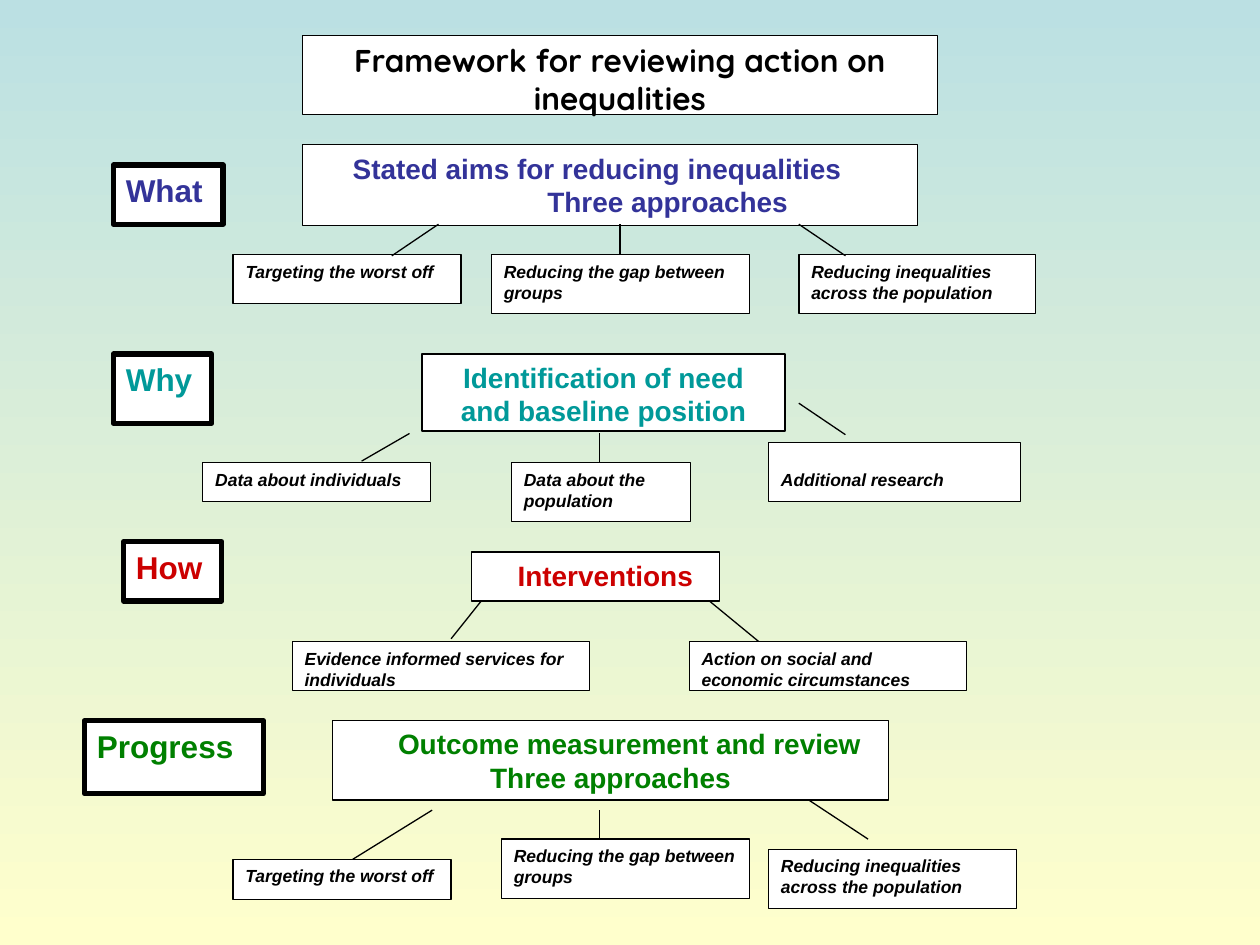
"""Build the slide showing a framework for reviewing action on inequalities."""
from dataclasses import dataclass

from lxml import etree
from pptx import Presentation
from pptx.dml.color import RGBColor
from pptx.enum import shapes, text
from pptx.oxml.ns import qn
from pptx.util import Inches, Pt

WIDTH, HEIGHT = Inches(10), Inches(7.5)
BLACK, WHITE = "000000", "FFFFFF"
BLUE, TEAL, RED, GREEN = "333399", "009999", "CC0000", "008000"


@dataclass(frozen=True)
class Style:
    """Look of one kind of box."""
    size: int
    font: str = "Arial"
    italic: bool = False
    centred: bool = False
    border: float = 0.75


TITLE = Style(18, font="Quicksand", centred=True)
LABEL = Style(18, border=3)
HEADING = Style(16, centred=True)
DETAIL = Style(10, italic=True)


@dataclass(frozen=True)
class Box:
    """Text box placed in percent of the slide; insets and indents in inches."""
    left: float
    top: float
    width: float
    height: float
    lines: tuple[str, ...]
    style: Style = DETAIL
    colour: str = BLACK
    indents: tuple[float, ...] = (0, 0)
    inset_top: float = 0.05
    inset_right: float = 0.1


@dataclass(frozen=True)
class Link:
    """Straight line between two points in percent of the slide."""
    x1: float
    y1: float
    x2: float
    y2: float


TARGETING = ("Targeting the worst off",)
GAP = ("Reducing the gap between groups",)
ACROSS = ("Reducing inequalities across the population",)

BOXES = (
    Box(24, 3.73, 50.4, 8.4, ("Framework for reviewing action on inequalities",), TITLE),

    Box(9, 17.47, 8.7, 6.27, ("What",), LABEL, BLUE),
    Box(24, 15.33, 48.8, 8.53, ("Stated aims for reducing inequalities", "Three approaches"),
        HEADING, BLUE, indents=(0, 1.12), inset_right=0.3),
    Box(18.5, 26.93, 18.1, 5.2, TARGETING),
    Box(39, 26.93, 20.5, 6.27, GAP),
    Box(63.4, 26.93, 18.8, 6.27, ACROSS),

    Box(9, 37.47, 7.8, 7.33, ("Why",), LABEL, TEAL),
    Box(33.5, 37.47, 28.8, 8.13, ("Identification of need and baseline position",),
        HEADING, TEAL),
    Box(16.1, 48.93, 18.1, 4.13, ("Data about individuals",)),
    Box(40.6, 48.93, 14.2, 6.27, ("Data about the population",)),
    Box(61, 46.8, 20, 6.27, ("Additional research",), inset_top=0.21),

    Box(9.8, 57.33, 7.8, 6.27, ("How",), LABEL, RED),
    Box(37.4, 58.4, 19.7, 5.2, ("Interventions",), Style(16), RED, indents=(0.27,)),
    Box(23.2, 67.87, 23.6, 5.2, ("Evidence informed services for individuals",)),
    Box(54.7, 67.87, 22, 5.2, ("Action on social and economic circumstances",)),

    Box(6.7, 76.27, 14.2, 7.73, ("Progress",), LABEL, GREEN),
    Box(26.4, 76.27, 44.1, 8.4, ("Outcome measurement and review", "Three approaches"),
        HEADING, GREEN, indents=(0.3, 0)),
    Box(18.5, 90.93, 17.3, 4.27, TARGETING),
    Box(39.8, 88.8, 19.7, 6.27, GAP),
    Box(61, 89.87, 19.7, 6.27, ACROSS),
)

LINKS = (
    Link(34.8, 23.73, 31.1, 27.07),
    Link(49.2, 23.73, 49.2, 26.93),
    Link(63.4, 23.73, 67.1, 27.07),
    Link(32.5, 45.87, 28.7, 48.8),
    Link(47.6, 45.87, 47.6, 48.93),
    Link(63.4, 42.67, 67.1, 46),
    Link(38.2, 63.6, 35.8, 67.6),
    Link(56.3, 63.6, 60.2, 67.87),
    Link(34.3, 85.73, 28, 90.93),
    Link(47.6, 85.73, 47.6, 88.8),
    Link(64.2, 84.67, 68.9, 88.8),
)


def across(share: float) -> int:
    """Turn a percentage of the slide width into a length."""
    return round(WIDTH * share / 100)


def down(share: float) -> int:
    """Turn a percentage of the slide height into a length."""
    return round(HEIGHT * share / 100)


def paint(colour_format, colour: str) -> None:
    """Set a colour from a hex string."""
    colour_format.rgb = RGBColor.from_string(colour)


def draw_line(line, width: float) -> None:
    """Give an outline or connector a solid black stroke."""
    line.fill.solid()
    paint(line.color, BLACK)
    line.width = Pt(width)


def add_box(slide, box: Box) -> None:
    """Add a white bordered box with its text."""
    shape = slide.shapes.add_shape(
        shapes.MSO_SHAPE.RECTANGLE, across(box.left), down(box.top),
        across(box.width), down(box.height))
    shape.shadow.inherit = False
    shape.fill.solid()
    paint(shape.fill.fore_color, WHITE)
    draw_line(shape.line, box.style.border)

    frame = shape.text_frame
    frame.word_wrap = True
    frame.vertical_anchor = text.MSO_ANCHOR.TOP
    frame.margin_top = Inches(box.inset_top)
    frame.margin_right = Inches(box.inset_right)
    frame.text = "\n".join(box.lines)
    for paragraph, indent in zip(frame.paragraphs, box.indents):
        centred = box.style.centred
        paragraph.alignment = text.PP_ALIGN.CENTER if centred else text.PP_ALIGN.LEFT
        if indent:
            paragraph._p.get_or_add_pPr().set("marL", str(Inches(indent)))
        for run in paragraph.runs:
            run.font.name = box.style.font
            run.font.size = Pt(box.style.size)
            run.font.bold = True
            run.font.italic = box.style.italic
            paint(run.font.color, box.colour)


def add_link(slide, link: Link) -> None:
    """Add a thin straight connector without a shadow."""
    connector = slide.shapes.add_connector(
        shapes.MSO_CONNECTOR.STRAIGHT, across(link.x1), down(link.y1),
        across(link.x2), down(link.y2))
    draw_line(connector.line, 0.75)
    etree.SubElement(connector._element.spPr, qn("a:effectLst"))


def fill_background(slide) -> None:
    """Shade the background from pale blue down to pale yellow."""
    fill = slide.background.fill
    fill.gradient()
    fill.gradient_angle = 270
    for stop, colour in zip(fill.gradient_stops, ("BBE0E3", "FFFFCC")):
        paint(stop.color, colour)


def main() -> None:
    """Build and save the presentation."""
    presentation = Presentation()
    presentation.slide_width, presentation.slide_height = WIDTH, HEIGHT
    slide = presentation.slides.add_slide(presentation.slide_layouts[6])
    fill_background(slide)
    for box in BOXES:
        add_box(slide, box)
    for link in LINKS:
        add_link(slide, link)
    presentation.save("out.pptx")


if __name__ == "__main__":
    main()
